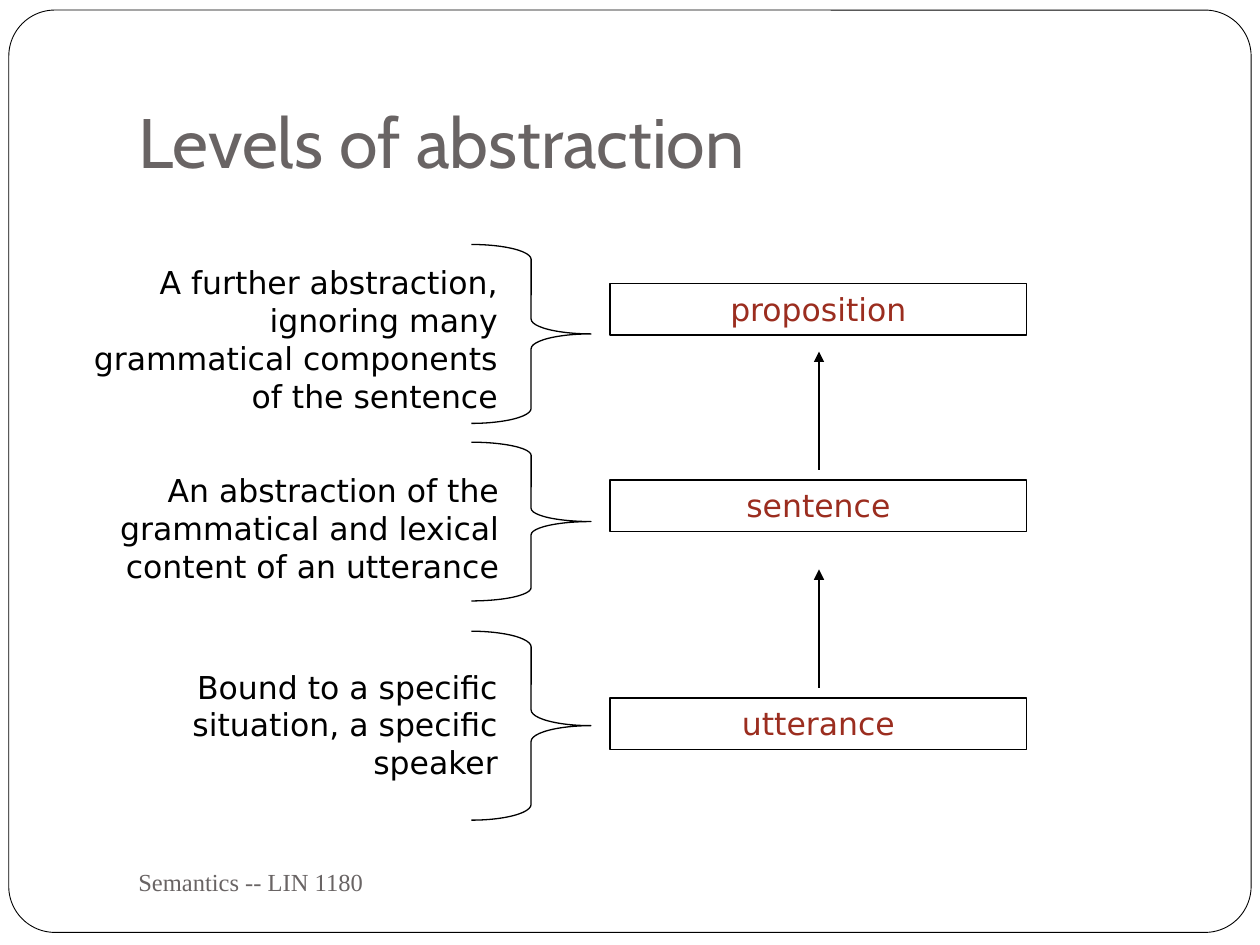
from lxml.etree import SubElement
from pptx import Presentation
from pptx.dml.color import RGBColor
from pptx.enum.shapes import MSO_CONNECTOR, MSO_SHAPE
from pptx.enum.text import MSO_ANCHOR, MSO_AUTO_SIZE, PP_ALIGN
from pptx.oxml.ns import qn
from pptx.util import Inches, Pt

COLORS = {"ink": "000000", "paper": "FFFFFF", "grey": "696464", "red": "9B2D1F"}
BODY = "DejaVu Sans"

# term, box top, brace top and height, note left, top, width and height, note
LEVELS = [
    ("proposition", 2.25, (1.94, 1.42), (0.51, 2.04, 3.54, 1.3),
     "A further abstraction, ignoring many grammatical components of the sentence"),
    ("sentence", 3.81, (3.51, 1.26), (0.67, 3.69, 3.39, 1),
     "An abstraction of the grammatical and lexical content of an utterance"),
    ("utterance", 5.54, (5.01, 1.5), (0.51, 5.25, 3.54, 1),
     "Bound to a specific situation, a specific speaker"),
]


def color(name):
    return RGBColor.from_string(COLORS[name])


class Board:
    def __init__(self, slide):
        self.slide = slide
        self.shapes = slide.shapes

    def label(self, frame, text, size, font, tone, align=PP_ALIGN.LEFT,
              anchor=MSO_ANCHOR.TOP):
        frame.word_wrap = True
        frame.auto_size = MSO_AUTO_SIZE.NONE
        frame.vertical_anchor = anchor
        para = frame.paragraphs[0]
        para.alignment = align
        run = para.add_run()
        run.text = text
        run.font.size = Pt(size)
        run.font.name = font
        run.font.color.rgb = color(tone)

    def title(self, text, left, top, width, height):
        title = self.shapes.title
        title.left, title.top = Inches(left), Inches(top)
        title.width, title.height = Inches(width), Inches(height)
        frame = title.text_frame
        frame.margin_bottom = Inches(0.1)
        self.label(frame, text, 40, "Cabin", "grey", anchor=MSO_ANCHOR.BOTTOM)

    def shape(self, kind, left, top, width, height, line=0.75, fill=None):
        shape = self.shapes.add_shape(
            kind, Inches(left), Inches(top), Inches(width), Inches(height))
        shape.shadow.inherit = False
        shape.line.color.rgb = color("ink")
        shape.line.width = Pt(line)
        if fill:
            shape.fill.solid()
            shape.fill.fore_color.rgb = color(fill)
        else:
            shape.fill.background()
        return shape

    def border(self, left, top, width, height):
        """Draw the rounded page border behind everything else."""
        shape = self.shape(MSO_SHAPE.ROUNDED_RECTANGLE, left, top, width, height,
                           line=0.5, fill="paper")
        shape.adjustments[0] = 0.05
        self.shapes.title._element.addprevious(shape._element)

    def box(self, text, left, top, width, height):
        shape = self.shape(MSO_SHAPE.RECTANGLE, left, top, width, height)
        self.label(shape.text_frame, text, 18, BODY, "red", PP_ALIGN.CENTER)

    def brace(self, left, top, width, height):
        shape = self.shape(MSO_SHAPE.RIGHT_BRACE, left, top, width, height)
        shape.adjustments[0] = height / width / 12

    def text(self, text, left, top, width, height, **style):
        box = self.shapes.add_textbox(
            Inches(left), Inches(top), Inches(width), Inches(height))
        self.label(box.text_frame, text, **style)

    def arrow(self, x, start, end):
        arrow = self.shapes.add_connector(
            MSO_CONNECTOR.STRAIGHT, Inches(x), Inches(start), Inches(x), Inches(end))
        arrow.line.color.rgb = color("ink")
        arrow.line.width = Pt(0.75)
        props = arrow._element.spPr
        SubElement(props.find(qn("a:ln")), qn("a:tailEnd"), type="triangle")
        SubElement(props, qn("a:effectLst"))


def main():
    deck = Presentation()
    deck.slide_width, deck.slide_height = Inches(10), Inches(7.5)
    board = Board(deck.slides.add_slide(deck.slide_layouts[5]))
    board.border(0.07, 0.08, 9.86, 7.32)
    board.title("Levels of abstraction", 1, 0.3, 8.5, 1.25)
    board.text("Semantics -- LIN 1180", 1, 6.75, 4.33, 0.5, size=14,
               font="Times New Roman", tone="grey", anchor=MSO_ANCHOR.MIDDLE)
    for term, top, (start, height), place, note in LEVELS:
        board.box(term, 4.84, top, 3.31, 0.41)
        board.brace(3.74, start, 0.95, height)
        board.text(note, *place, size=18, font=BODY, tone="ink",
                   align=PP_ALIGN.RIGHT)
    for level in LEVELS[1:]:
        foot = level[1] - 0.08
        board.arrow(6.5, foot, foot - 0.94)
    deck.save("out.pptx")


if __name__ == "__main__":
    main()
